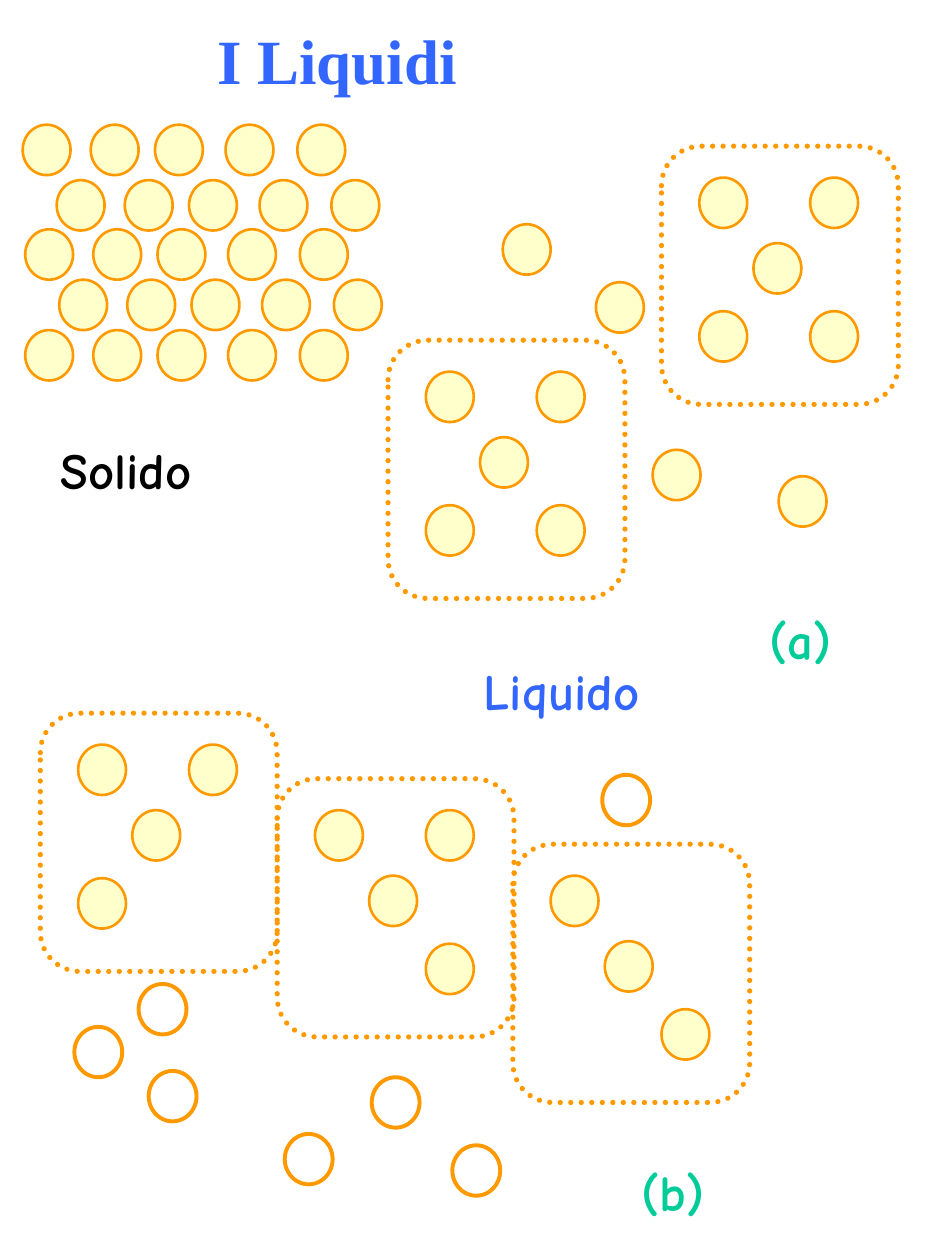
from dataclasses import dataclass

from pptx import Presentation
from pptx.dml.color import RGBColor
from pptx.enum.dml import MSO_LINE_DASH_STYLE as Dash
from pptx.enum.shapes import MSO_AUTO_SHAPE_TYPE as Shape
from pptx.enum.text import MSO_AUTO_SIZE as AutoSize, PP_ALIGN as Align
from pptx.oxml.ns import qn
from pptx.util import Pt

PX = 9144  # EMU per px, 100 px to the inch


@dataclass(frozen=True)
class Theme:
    orange: str = "FF9900"
    cream: str = "FFFFCC"
    blue: str = "3366FF"
    green: str = "00CC99"
    black: str = "000000"
    title_font: str = "Times New Roman"
    label_font: str = "Comic Neue"
    title_size: int = 36
    label_size: int = 29


def write_text(frame, text, *, font, size, color, align=None):
    para = frame.paragraphs[0]
    para.alignment = align
    span = para.add_run()
    span.text = text
    span.font.name = font
    span.font.size = Pt(size)
    span.font.bold = True
    span.font.color.rgb = RGBColor.from_string(color)


class Painter:
    def __init__(self, page, theme):
        self.page = page
        self.theme = theme

    def outline(self, kind, left, top, width, height, weight, fill=None):
        shape = self.page.shapes.add_shape(
            kind, left * PX, top * PX, width * PX, height * PX)
        shape.shadow.inherit = False
        if fill:
            shape.fill.solid()
            shape.fill.fore_color.rgb = RGBColor.from_string(fill)
        else:
            shape.fill.background()
        shape.line.color.rgb = RGBColor.from_string(self.theme.orange)
        shape.line.width = Pt(weight)
        return shape

    def particle(self, left, top):
        self.outline(Shape.OVAL, left, top, 38, 40, 1.5, self.theme.cream)

    def vacancy(self, left, top):
        self.outline(Shape.OVAL, left, top, 38, 40, 2.25)

    def cluster(self, left, top, sites):
        """Draw particles at the named sites inside a dotted frame."""
        for site in sites:
            across, down = SITES[site]
            self.particle(left + across, top + down)
        frame = self.outline(Shape.ROUNDED_RECTANGLE, left, top, 188, 205, 3)
        frame.adjustments[0] = 0.167
        frame.line.dash_style = Dash.ROUND_DOT
        frame.element.spPr.find(qn("a:ln")).set("cap", "rnd")

    def title(self, text, left, top, width, height):
        box = self.page.shapes.add_textbox(
            left * PX, top * PX, width * PX, height * PX)
        box.text_frame.word_wrap = False
        write_text(box.text_frame, text, font=self.theme.title_font,
                   size=self.theme.title_size, color=self.theme.blue,
                   align=Align.CENTER)

    def label(self, text, left, top, width, color):
        box = self.page.shapes.add_textbox(
            left * PX, top * PX, width * PX, 55 * PX)
        frame = box.text_frame
        frame.word_wrap = False
        frame.auto_size = AutoSize.SHAPE_TO_FIT_TEXT
        frame.margin_left = frame.margin_right = 6 * PX
        frame.margin_top = frame.margin_bottom = 3 * PX
        write_text(frame, text, font=self.theme.label_font,
                   size=self.theme.label_size, color=color)


SITES = {
    "top left": (30, 25),
    "top right": (118, 25),
    "center": (73, 77),
    "bottom left": (30, 131),
    "bottom right": (118, 131),
}
CLUSTERS = [
    (308, 270, SITES),
    (525, 116, SITES),
    (32, 566, ["top left", "top right", "center", "bottom left"]),
    (220, 618, ["top left", "top right", "center", "bottom right"]),
    (407, 670, ["top left", "center", "bottom right"]),
]
LATTICE_COLUMNS = [18, 72, 123, 179, 236]
LATTICE_ROWS = [(0, 99), (27, 143), (2, 182), (29, 222), (2, 262)]  # shift, top
FREE_PARTICLES = [(399, 178), (473, 224), (518, 357), (618, 378)]
VACANCIES = [(110, 781), (295, 855), (478, 615), (59, 815),
             (118, 850), (226, 900), (359, 909)]


def main():
    deck = Presentation()
    deck.slide_width = 750 * PX
    deck.slide_height = 1000 * PX
    theme = Theme()
    painter = Painter(deck.slides.add_slide(deck.slide_layouts[6]), theme)

    for shift, top in LATTICE_ROWS:
        for column in LATTICE_COLUMNS:
            painter.particle(column + shift, top)
    for left, top, sites in CLUSTERS:
        painter.cluster(left, top, sites)
    for left, top in FREE_PARTICLES:
        painter.particle(left, top)
    for left, top in VACANCIES:
        painter.vacancy(left, top)

    painter.label("(a)", 605, 480, 64, theme.green)
    painter.label("(b)", 503, 918, 66, theme.green)
    painter.title("I Liquidi", 5, 12, 525, 73)
    painter.label("Solido", 42, 345, 129, theme.black)
    painter.label("Liquido", 378, 521, 145, theme.blue)
    deck.save("out.pptx")


if __name__ == "__main__":
    main()
